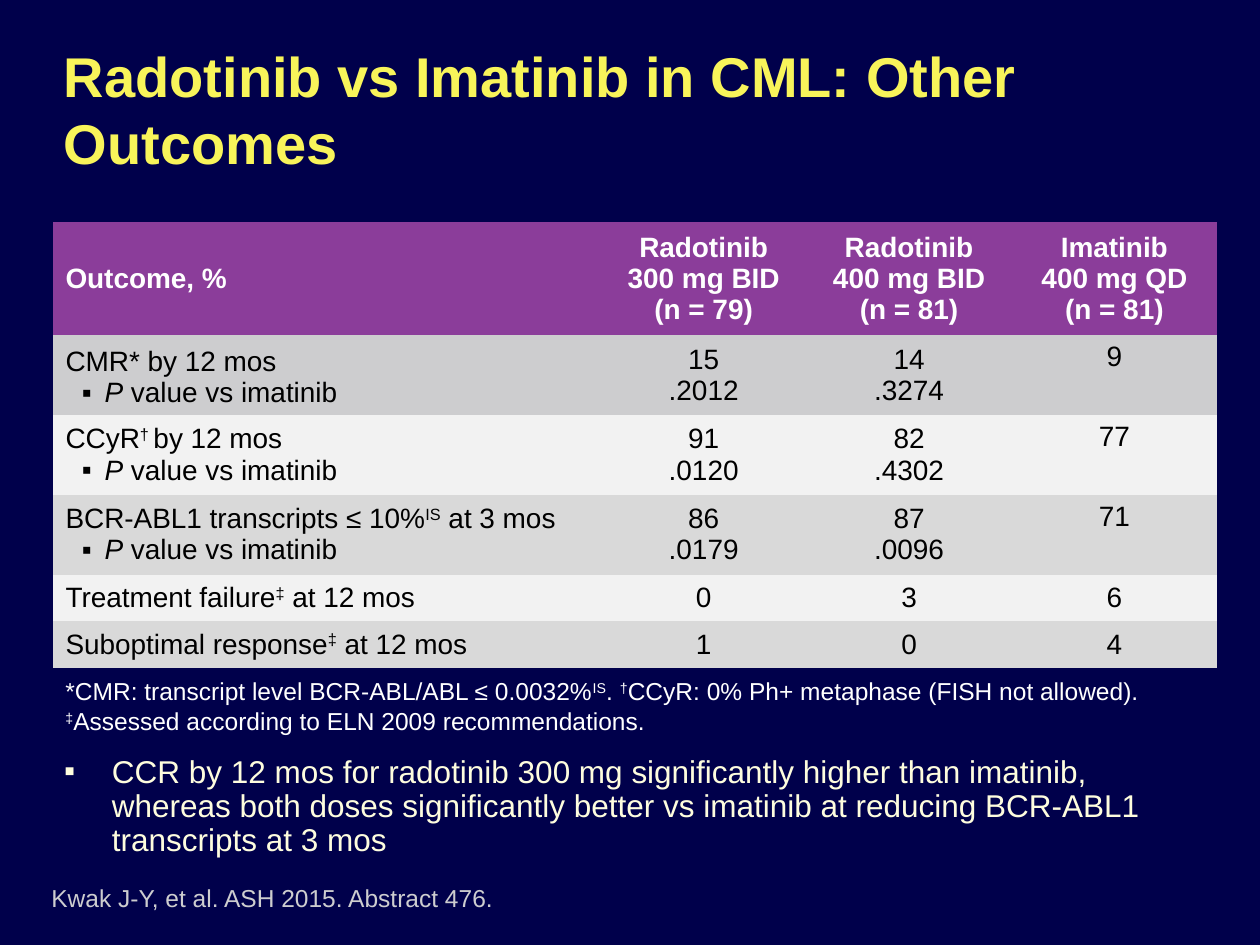
from dataclasses import dataclass

from lxml.etree import SubElement
from pptx import Presentation
from pptx.dml.color import RGBColor
from pptx.enum.text import MSO_ANCHOR as Anchor, PP_ALIGN as Align
from pptx.oxml.ns import qn
from pptx.util import Inches, Pt

FONT = "Arial"
COLORS = {
    "background": "00004B", "title": "F8F45A", "body": "FEFDDE",
    "citation": "CDCDCF", "white": "FFFFFF", "black": "000000",
    "header": "8B3D9A", "first": "CDCDCF", "light": "F2F2F2", "dark": "D9D9D9",
}
NO_STYLE_NO_GRID = "{2D5ABB26-0587-4C30-8999-92F81FD0307C}"


@dataclass
class Run:
    text: str
    sup: bool = False
    italic: bool = False


@dataclass
class Style:
    size: int
    color: str
    bold: bool = False


@dataclass
class Box:
    left: float
    top: float
    width: float
    height: float


@dataclass
class Row:
    label: list[list[Run]]
    values: list[list[str]]
    fill: str
    height: float
    label_anchor: Anchor = Anchor.MIDDLE


def color(name: str) -> RGBColor:
    return RGBColor.from_string(COLORS[name])


def add_runs(p, runs: list[Run], style: Style) -> None:
    for run in runs:
        r = p.add_run()
        r.text = run.text
        r.font.name, r.font.size = FONT, Pt(style.size)
        r.font.bold, r.font.italic = style.bold, run.italic
        r.font.color.rgb = color(style.color)
        if run.sup:
            r.font._element.set("baseline", "30000")


def fill_text(tf, paragraphs: list[list[Run]], style: Style, align=Align.LEFT) -> None:
    for i, runs in enumerate(paragraphs):
        p = tf.add_paragraph() if i else tf.paragraphs[0]
        p.alignment = align
        add_runs(p, runs, style)


def add_bullet(p, margin: float, hanging: float, bullet_color: str) -> None:
    pPr = p._p.get_or_add_pPr()
    pPr.set("marL", str(Inches(margin)))
    pPr.set("indent", str(-Inches(hanging)))
    clr = SubElement(pPr, qn("a:buClr"))
    SubElement(clr, qn("a:srgbClr")).set("val", COLORS[bullet_color])
    SubElement(pPr, qn("a:buFont")).set("typeface", FONT)
    SubElement(pPr, qn("a:buChar")).set("char", "▪")


def add_text(slide, box: Box, paragraphs: list[list[Run]], style: Style, anchor=Anchor.TOP):
    sp = slide.shapes.add_textbox(
        Inches(box.left), Inches(box.top), Inches(box.width), Inches(box.height))
    tf = sp.text_frame
    tf.word_wrap = True
    tf.vertical_anchor = anchor
    fill_text(tf, paragraphs, style)
    return tf


def fill_cell(cell, paragraphs, style: Style, fill: str, anchor, align) -> None:
    cell.fill.solid()
    cell.fill.fore_color.rgb = color(fill)
    cell.vertical_anchor = anchor
    fill_text(cell.text_frame, paragraphs, style, align)


def add_outcomes(slide, box: Box, widths: list[float], rows: list[Row]) -> None:
    table = slide.shapes.add_table(
        len(rows), len(widths), Inches(box.left), Inches(box.top),
        Inches(box.width), Inches(box.height)).table
    table._tbl.tblPr.find(qn("a:tableStyleId")).text = NO_STYLE_NO_GRID
    for column, width in zip(table.columns, widths):
        column.width = Inches(width)
    for i, row in enumerate(rows):
        table.rows[i].height = Inches(row.height)
        style = Style(16, "black") if i else Style(16, "white", bold=True)
        label = table.cell(i, 0)
        fill_cell(label, row.label, style, row.fill, row.label_anchor, Align.LEFT)
        for p in label.text_frame.paragraphs[1:]:
            add_bullet(p, 0.31, 0.18, style.color)
        for j, lines in enumerate(row.values, 1):
            # A lone value lines up with the first line of a two-line row
            anchor = Anchor.TOP if len(lines) < len(row.label) else Anchor.MIDDLE
            fill_cell(table.cell(i, j), [[Run(line)] for line in lines],
                      style, row.fill, anchor, Align.CENTER)


P_VALUE = [Run("P", italic=True), Run(" value vs imatinib")]
ROWS = [
    Row([[Run("Outcome, %")]],
        [["Radotinib", "300 mg BID", "(n = 79)"],
         ["Radotinib", "400 mg BID", "(n = 81)"],
         ["Imatinib", "400 mg QD", "(n = 81)"]], "header", 0.9),
    Row([[Run("CMR* by 12 mos")], P_VALUE],
        [["15", ".2012"], ["14", ".3274"], ["9"]], "first", 0.63, Anchor.BOTTOM),
    Row([[Run("CCyR"), Run("† ", sup=True), Run("by 12 mos")], P_VALUE],
        [["91", ".0120"], ["82", ".4302"], ["77"]], "light", 0.63),
    Row([[Run("BCR-ABL1 transcripts ≤ 10%"), Run("IS", sup=True), Run(" at 3 mos")], P_VALUE],
        [["86", ".0179"], ["87", ".0096"], ["71"]], "dark", 0.63),
    Row([[Run("Treatment failure"), Run("‡", sup=True), Run(" at 12 mos")]],
        [["0"], ["3"], ["6"]], "light", 0.37),
    Row([[Run("Suboptimal response"), Run("‡", sup=True), Run(" at 12 mos")]],
        [["1"], ["0"], ["4"]], "dark", 0.37),
]
FOOTNOTES = [
    [Run("*CMR: transcript level BCR-ABL/ABL ≤ 0.0032%"), Run("IS", sup=True), Run(". "),
     Run("†", sup=True), Run("CCyR: 0% Ph+ metaphase (FISH not allowed).")],
    [Run("‡", sup=True), Run("Assessed according to ELN 2009 recommendations.")],
]
CONCLUSION = ("CCR by 12 mos for radotinib 300 mg significantly higher than imatinib, "
              "whereas both doses significantly better vs imatinib at reducing BCR-ABL1 "
              "transcripts at 3 mos")


def main() -> None:
    prs = Presentation()
    prs.slide_width, prs.slide_height = Inches(10), Inches(7.5)
    s = prs.slides.add_slide(prs.slide_layouts[6])
    s.background.fill.solid()
    s.background.fill.fore_color.rgb = color("background")

    # Title
    add_text(s, Box(0.41, 0.26, 9.23, 1.21),
             [[Run("Radotinib vs Imatinib in CML: Other Outcomes")]],
             Style(32, "title", bold=True), Anchor.MIDDLE)

    # Conclusion bullet
    tf = add_text(s, Box(0.41, 5.95, 9.25, 0.79), [[Run(CONCLUSION)]], Style(18, "body"))
    p = tf.paragraphs[0]
    p.line_spacing, p.space_before, p.space_after = 0.9, Pt(10), Pt(7)
    add_bullet(p, 0.38, 0.38, "body")

    # Outcomes table
    add_outcomes(s, Box(0.42, 1.76, 9.25, 3.53), [4.35] + [1.63] * 3, ROWS)

    # Citation and footnotes
    add_text(s, Box(0.31, 6.95, 9.36, 0.34),
             [[Run("Kwak J-Y, et al. ASH 2015. Abstract 476.")]],
             Style(14, "citation"), Anchor.BOTTOM)
    add_text(s, Box(0.42, 5.32, 9.25, 0.57), FOOTNOTES, Style(14, "white"))

    prs.save("out.pptx")


if __name__ == "__main__":
    main()
